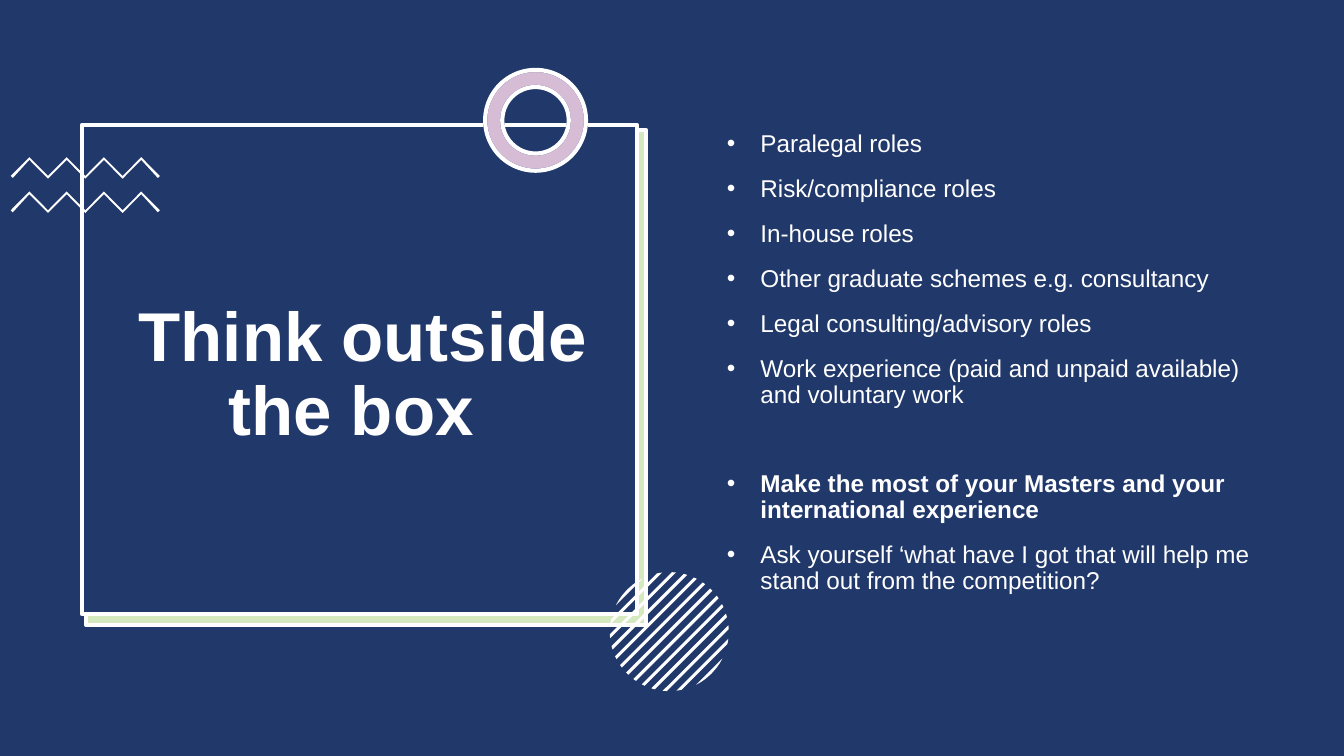
import math
from dataclasses import dataclass

import lxml.etree
import pptx
import pptx.dml.color
import pptx.enum.shapes
import pptx.enum.text
import pptx.oxml.ns
import pptx.util

EMU_PER_PX = 4572  # 200 px to the inch
SHAPE = pptx.enum.shapes.MSO_SHAPE
ALIGN = pptx.enum.text.PP_ALIGN
ANCHOR = pptx.enum.text.MSO_ANCHOR
AUTO_SIZE = pptx.enum.text.MSO_AUTO_SIZE


@dataclass(frozen=True)
class Theme:
    navy: str = "21386A"
    white: str = "FFFFFF"
    green: str = "73B82B"
    purple: str = "792273"
    font: str = "Arial"
    title_size: int = 37
    body_size: int = 13
    outline: float = 2.25
    tint: int = 30


@dataclass(frozen=True)
class Box:
    left: int
    top: int
    width: int
    height: int


@dataclass(frozen=True)
class Panel:
    kind: int
    box: Box
    fill: str
    line: str | None = None
    opacity: int = 100


@dataclass(frozen=True)
class Bullet:
    text: str
    bold: bool = False
    before: float = 10


THEME = Theme()
CARD_BACK = Box(128, 194, 834, 736)
CARD_FRONT = Box(122, 186, 826, 728)
RING = Box(722, 104, 150, 150)
RING_THICKNESS = 0.17
TITLE = Box(138, 228, 804, 664)
BODY = Box(1062, 186, 816, 714)
BULLET_INDENT = 50

PANELS = [
    Panel(SHAPE.RECTANGLE, CARD_BACK, THEME.white),
    Panel(SHAPE.RECTANGLE, CARD_BACK, THEME.green, THEME.white, THEME.tint),
    Panel(SHAPE.RECTANGLE, CARD_FRONT, THEME.navy, THEME.white),
]
RINGS = [
    Panel(SHAPE.DONUT, RING, THEME.white, THEME.navy),
    Panel(SHAPE.DONUT, RING, THEME.purple, THEME.white, THEME.tint),
]
BULLETS = [
    Bullet("Paralegal roles", before=0),
    Bullet("Risk/compliance roles"),
    Bullet("In-house roles"),
    Bullet("Other graduate schemes e.g. consultancy"),
    Bullet("Legal consulting/advisory roles"),
    Bullet("Work experience (paid and unpaid available) and voluntary work"),
    Bullet("Make the most of your Masters and your international experience", True, 33.5),
    Bullet("Ask yourself ‘what have I got that will help me stand out from the competition?"),
]


def px(value: float) -> int:
    return round(value * EMU_PER_PX)


def rgb(value: str) -> pptx.dml.color.RGBColor:
    return pptx.dml.color.RGBColor.from_string(value)


def apply(target, values: dict) -> None:
    for name, value in values.items():
        setattr(target, name, value)


def place(box: Box) -> dict:
    return {name: px(getattr(box, name)) for name in ("left", "top", "width", "height")}


def paint(shape, fill: str, line: str | None = None, opacity: int = 100) -> None:
    shape.shadow.inherit = False
    shape.fill.solid()
    shape.fill.fore_color.rgb = rgb(fill)
    if opacity < 100:
        color = shape.element.spPr.find(".//" + pptx.oxml.ns.qn("a:srgbClr"))
        alpha = lxml.etree.SubElement(color, pptx.oxml.ns.qn("a:alpha"))
        alpha.set("val", str(opacity * 1000))
    if line is None:
        shape.line.fill.background()
    else:
        shape.line.color.rgb = rgb(line)
        shape.line.width = pptx.util.Pt(THEME.outline)


def draw_panel(page, panel: Panel) -> None:
    shape = page.shapes.add_shape(panel.kind, **place(panel.box))
    if panel.kind == SHAPE.DONUT:
        shape.adjustments[0] = RING_THICKNESS
    paint(shape, panel.fill, panel.line, panel.opacity)


def draw_outline(group, points: list[tuple[float, float]]) -> None:
    corners = [(px(x), px(y)) for x, y in points]
    builder = group.shapes.build_freeform(*corners[0], scale=1.0)
    builder.add_line_segments(corners[1:], close=True)
    paint(builder.convert_to_shape(), THEME.white)


def draw_zigzag(group, left: int, top: int) -> None:
    pitch, rise, thickness, last = 27.75, 28, 4, 8
    upper = [(left + pitch * i, top + rise * (1 - i % 2)) for i in range(last + 1)]
    lower = [(x, y + thickness) for x, y in upper]
    lower[0] = (upper[0][0] + 3, upper[0][1] + 3)
    lower[last] = (upper[last][0] - 3, upper[last][1] + 3)
    draw_outline(group, upper + lower[::-1])


def draw_striped_circle(group, center_x: int, center_y: int, radius: float) -> None:
    gap, half_width, steps = 14.4, 2.3, 6

    def rim(distance: float, side: int) -> tuple[float, float]:
        reach = side * math.sqrt(max(radius**2 - distance**2, 0))
        return (center_x + (distance + reach) / math.sqrt(2),
                center_y + (distance - reach) / math.sqrt(2))

    for stripe in range(-6, 7):
        start = max(stripe * gap - half_width, -radius)
        end = min(stripe * gap + half_width, radius)
        cuts = [start + (end - start) * i / steps for i in range(steps + 1)]
        draw_outline(group, [rim(cut, 1) for cut in cuts]
                     + [rim(cut, -1) for cut in reversed(cuts)])


def write(para, text: str, size: int, bold: bool) -> None:
    span = para.add_run()
    span.text = text
    apply(span.font, {"name": THEME.font, "size": pptx.util.Pt(size), "bold": bold})
    span.font.color.rgb = rgb(THEME.white)


def write_title(title) -> None:
    apply(title, place(TITLE))
    apply(title.text_frame, {"word_wrap": True, "auto_size": AUTO_SIZE.NONE,
                             "vertical_anchor": ANCHOR.MIDDLE})
    para = title.text_frame.paragraphs[0]
    apply(para, {"alignment": ALIGN.CENTER, "line_spacing": 0.9,
                 "space_before": pptx.util.Pt(0)})
    write(para, "Think outside the box\t", THEME.title_size, True)


def write_bullets(page) -> None:
    frame = page.shapes.add_textbox(**place(BODY)).text_frame
    apply(frame, {"word_wrap": True, "auto_size": AUTO_SIZE.NONE})
    for index, bullet in enumerate(BULLETS):
        para = frame.add_paragraph() if index else frame.paragraphs[0]
        settings = para._p.get_or_add_pPr()
        settings.set("marL", str(px(BULLET_INDENT)))
        settings.set("indent", str(-px(BULLET_INDENT)))
        for tag, key, value in (("a:buFont", "typeface", THEME.font),
                                ("a:buChar", "char", "•")):
            lxml.etree.SubElement(settings, pptx.oxml.ns.qn(tag)).set(key, value)
        apply(para, {"line_spacing": 0.9, "space_before": pptx.util.Pt(bullet.before)})
        write(para, bullet.text, THEME.body_size, bullet.bold)


def main() -> None:
    deck = pptx.Presentation()
    apply(deck, {"slide_width": px(2000), "slide_height": px(1125)})
    page = deck.slides.add_slide(deck.slide_layouts[5])
    page.background.fill.solid()
    page.background.fill.fore_color.rgb = rgb(THEME.navy)

    # Framed card
    for panel in PANELS:
        draw_panel(page, panel)

    # Ornaments
    waves = page.shapes.add_group_shape()
    for top in (234, 285):
        draw_zigzag(waves, 16, top)
    for ring in RINGS:
        draw_panel(page, ring)
    draw_striped_circle(page.shapes.add_group_shape(), 996, 940, 88.5)

    # Text, with the title brought in front of the card
    title = page.shapes.title
    title.element.getparent().append(title.element)
    write_title(title)
    write_bullets(page)

    deck.save("out.pptx")


if __name__ == "__main__":
    main()
